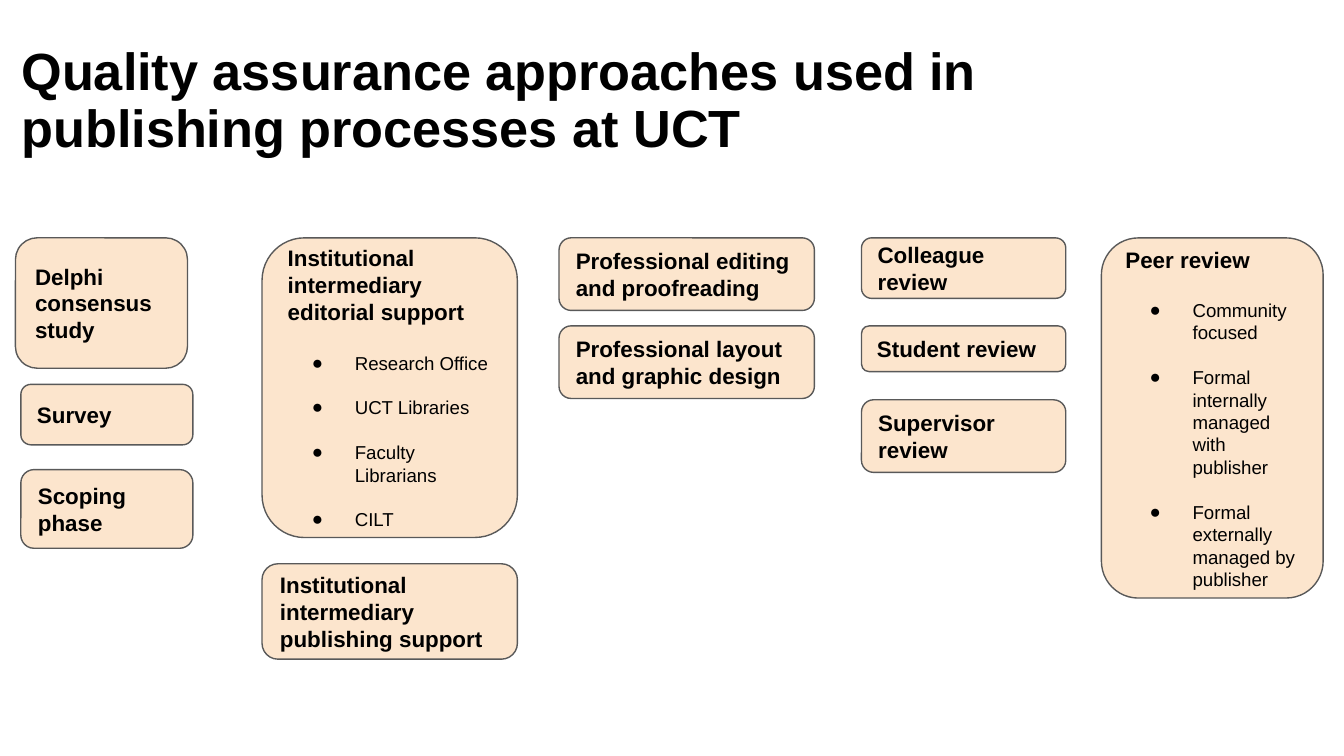
from pptx import Presentation
from pptx.dml.color import RGBColor
from pptx.enum.shapes import MSO_SHAPE
from pptx.enum.text import MSO_ANCHOR, MSO_AUTO_SIZE, PP_ALIGN
from pptx.oxml.ns import qn
from pptx.util import Inches, Pt
from lxml.etree import SubElement

COLS, ROWS = 100, 56.25
CELL = Inches(0.1)
TOP = 17.7
MID = 24.25


def tint(code):
    return RGBColor.from_string(code)


def write(para, text, size=12, bold=True, color="000000", before=0, bullet=False):
    para.alignment = PP_ALIGN.LEFT
    para.space_before = Pt(before)
    run = para.add_run()
    run.text = text
    font = run.font
    font.name, font.size, font.bold = "Arial", Pt(size), bold
    font.color.rgb = tint(color)
    if bullet:
        props = para._p.get_or_add_pPr()
        props.set("marL", str(Inches(0.5)))
        props.set("indent", str(-Inches(0.32)))
        hue = SubElement(props, qn("a:buClr"))
        SubElement(hue, qn("a:srgbClr"), val=color)
        SubElement(props, qn("a:buFont"), typeface="Arial")
        SubElement(props, qn("a:buChar"), char="●")


class Deck:
    fill, line = "FCE5CD", "595959"

    def __init__(self):
        self.file = Presentation()
        self.file.slide_width = int(COLS * CELL)
        self.file.slide_height = int(ROWS * CELL)
        self.slide = self.file.slides.add_slide(self.file.slide_layouts[5])

    def grid(self, *cells):
        return [int(cell * CELL) for cell in cells]

    def frame(self, shape, side, edge):
        body = shape.text_frame
        body.word_wrap = True
        body.auto_size = MSO_AUTO_SIZE.NONE
        body.vertical_anchor = MSO_ANCHOR.MIDDLE
        body.margin_left = body.margin_right = Inches(side)
        body.margin_top = body.margin_bottom = Inches(edge)
        return body

    def title(self, text, col, row, wide, high):
        shape = self.slide.shapes.title
        shape.left, shape.top, shape.width, shape.height = self.grid(col, row, wide, high)
        para = self.frame(shape, 0.07, 0.04).paragraphs[0]
        para.line_spacing = 0.9
        write(para, text, size=28)

    def card(self, text, col, row, wide, high, items=()):
        shape = self.slide.shapes.add_shape(
            MSO_SHAPE.FLOWCHART_ALTERNATE_PROCESS, *self.grid(col, row, wide, high))
        shape.shadow.inherit = False
        shape.fill.solid()
        shape.fill.fore_color.rgb = tint(self.fill)
        shape.line.color.rgb = tint(self.line)
        shape.line.width = Pt(0.75)
        body = self.frame(shape, 0.1, 0.1)
        write(body.paragraphs[0], text)
        for spot, item in enumerate(items):
            write(body.add_paragraph(), item, size=10, bold=False,
                  before=12 if spot else 14, bullet=True)

    def stack(self, col, wide, cards):
        for text, row, high, *items in cards:
            self.card(text, col, row, wide, high, items)


def main():
    deck = Deck()
    deck.title("Quality assurance approaches used in publishing processes at UCT",
               0.9, 2.15, 86.2, 10.9)
    deck.stack(1.15, 12.8, [("Delphi consensus study", TOP, 9.7)])
    deck.stack(1.55, 12.8, [("Survey", 28.6, 4.5), ("Scoping phase", 34.95, 5.85)])
    deck.stack(19.5, 19, [
        ("Institutional intermediary editorial support", TOP, 22.3,
         "Research Office", "UCT Libraries", "Faculty Librarians", "CILT"),
        ("Institutional intermediary publishing support", 41.95, 7.1),
    ])
    deck.stack(41.6, 19, [
        ("Professional editing and proofreading", TOP, 5.4),
        ("Professional layout and graphic design", MID, 5.4),
    ])
    deck.stack(64.1, 15.2, [
        ("Colleague review", TOP, 4.5),
        ("Student review", MID, 3.4),
        ("Supervisor review", 29.75, 5.4),
    ])
    deck.stack(81.95, 16.5, [
        ("Peer review", TOP, 26.8, "Community focused",
         "Formal internally managed with publisher",
         "Formal externally managed by publisher"),
    ])
    deck.file.save("out.pptx")


if __name__ == "__main__":
    main()
